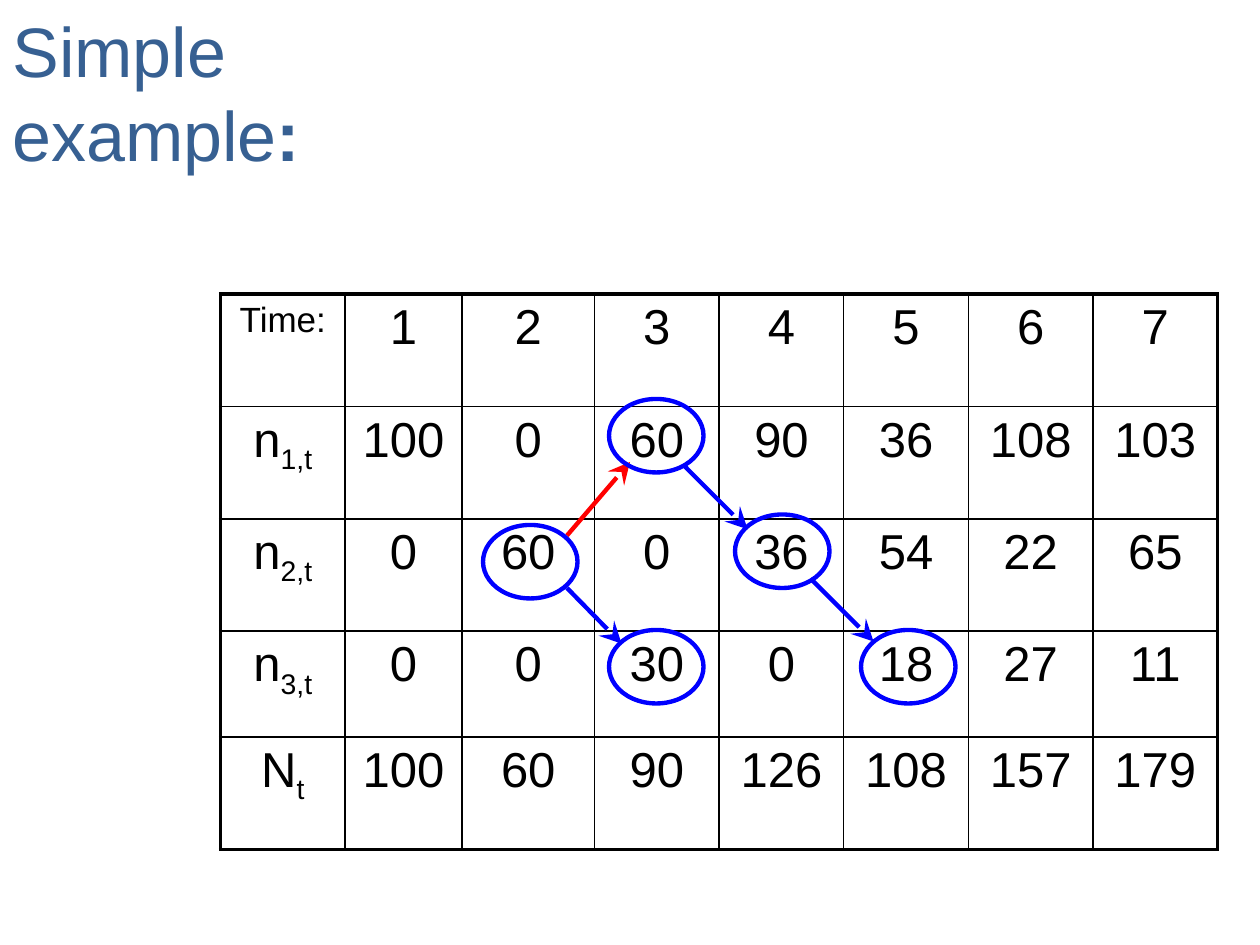
from dataclasses import dataclass

from lxml.etree import SubElement
from pptx import Presentation
from pptx.dml.color import RGBColor
from pptx.enum.shapes import MSO_CONNECTOR, MSO_SHAPE
from pptx.enum.text import MSO_AUTO_SIZE, PP_ALIGN
from pptx.oxml.ns import qn
from pptx.util import Inches, Pt


@dataclass(frozen=True)
class Theme:
    font: str = "Arial"
    title: str = "376092"
    ink: str = "000000"
    survival: str = "0000FF"
    birth: str = "FF0000"
    title_size: int = 40
    label_size: int = 20
    value_size: int = 28
    outer_border: float = 2.25
    inner_border: float = 1
    mark_line: float = 2.5


def grid(units):
    """Length on a grid of twelve units to the inch (120 columns by 90 rows)."""
    return Inches(units / 12)


class SlideBuilder:
    def __init__(self, slide, theme):
        self.shapes = slide.shapes
        self.theme = theme

    def style_run(self, run, size, color):
        run.font.name = self.theme.font
        run.font.size = Pt(size)
        run.font.color.rgb = RGBColor.from_string(color)

    def style_line(self, line, color):
        line.color.rgb = RGBColor.from_string(color)
        line.width = Pt(self.theme.mark_line)

    def title(self, lines, bold_ending, left, top, width, height):
        box = self.shapes.add_textbox(*map(grid, (left, top, width, height)))
        frame = box.text_frame
        frame.word_wrap = False
        frame.auto_size = MSO_AUTO_SIZE.SHAPE_TO_FIT_TEXT
        frame.text = "\n".join(lines)
        ending = frame.paragraphs[-1].add_run()
        ending.text = bold_ending
        ending.font.bold = True
        for paragraph in frame.paragraphs:
            for run in paragraph.runs:
                self.style_run(run, self.theme.title_size, self.theme.title)

    def border(self, cell, side, width):
        edge = SubElement(cell._tc.get_or_add_tcPr(), qn(f"a:ln{side}"), w=str(Pt(width)))
        fill = SubElement(edge, qn("a:solidFill"))
        SubElement(fill, qn("a:srgbClr"), val=self.theme.ink)

    def cell(self, cell, text, size, outer_sides):
        base, _, subscript = text.partition("_")
        paragraph = cell.text_frame.paragraphs[0]
        paragraph.text = base
        paragraph.alignment = PP_ALIGN.CENTER
        spacing = SubElement(paragraph._p.get_or_add_pPr(), qn("a:spcBef"))
        SubElement(spacing, qn("a:spcPct"), val="20000")
        if subscript:
            index = paragraph.add_run()
            index.text = subscript
            index.font._element.set("baseline", "-25000")
        for run in paragraph.runs:
            self.style_run(run, size, self.theme.ink)
        for side in "LRTB":
            outer = side in outer_sides
            self.border(cell, side, self.theme.outer_border if outer else self.theme.inner_border)
        cell.fill.background()

    def table(self, rows, left, top, widths, heights):
        area = map(grid, (left, top, sum(widths), sum(heights)))
        table = self.shapes.add_table(len(rows), len(widths), *area).table
        table.first_row = table.horz_banding = False
        for column, width in zip(table.columns, widths):
            column.width = grid(width)
        for row, height in zip(table.rows, heights):
            row.height = grid(height)
        last_row, last_column = len(rows) - 1, len(widths) - 1
        for r, row in enumerate(rows):
            for c, text in enumerate(row):
                edges = {"L": c == 0, "R": c == last_column, "T": r == 0, "B": r == last_row}
                size = self.theme.label_size if r == c == 0 else self.theme.value_size
                self.cell(table.cell(r, c), text, size, [s for s in edges if edges[s]])

    def arrow(self, start, end, color):
        ends = map(grid, (*start, *end))
        connector = self.shapes.add_connector(MSO_CONNECTOR.STRAIGHT, *ends)
        self.style_line(connector.line, color)
        SubElement(connector.line._get_or_add_ln(), qn("a:tailEnd"),
                   type="stealth", w="lg", len="lg")
        SubElement(connector._element.spPr, qn("a:effectLst"))

    def ring(self, left, top, width=9, height=7):
        area = map(grid, (left, top, width, height))
        oval = self.shapes.add_shape(MSO_SHAPE.OVAL, *area)
        oval.shadow.inherit = False
        oval.fill.background()
        self.style_line(oval.line, self.theme.survival)


POPULATION = [
    ["Time:", "1", "2", "3", "4", "5", "6", "7"],
    ["n_1,t", "100", "0", "60", "90", "36", "108", "103"],
    ["n_2,t", "0", "60", "0", "36", "54", "22", "65"],
    ["n_3,t", "0", "0", "30", "0", "18", "27", "11"],
    ["N_t", "100", "60", "90", "126", "108", "157", "179"],
]


def main():
    theme = Theme()
    deck = Presentation()
    deck.slide_width, deck.slide_height = Inches(10), Inches(7.5)
    builder = SlideBuilder(deck.slides.add_slide(deck.slide_layouts[6]), theme)

    # Population by age class and time
    builder.table(POPULATION, left=21, top=28,
                  widths=[11.87, 11.13, 12.63] + [11.87] * 5,
                  heights=[10.71] * 3 + [10.08, 10.71])

    # Births and survival between classes
    builder.arrow((54, 51), (60, 44), theme.birth)
    for start, end in [((65.2, 44.4), (71.2, 50.4)),
                       ((77.2, 55.1), (83.2, 61.1)),
                       ((54, 56), (59.2, 61.3))]:
        builder.arrow(start, end, theme.survival)

    # Rings around the followed counts
    for left, top in [(46, 50), (58, 38), (70, 49), (82, 60), (58, 60)]:
        builder.ring(left, top)

    # Title
    builder.title(["Simple", "example"], ":", left=0, top=0.1, width=31.1, height=17.4)

    deck.save("out.pptx")


if __name__ == "__main__":
    main()
